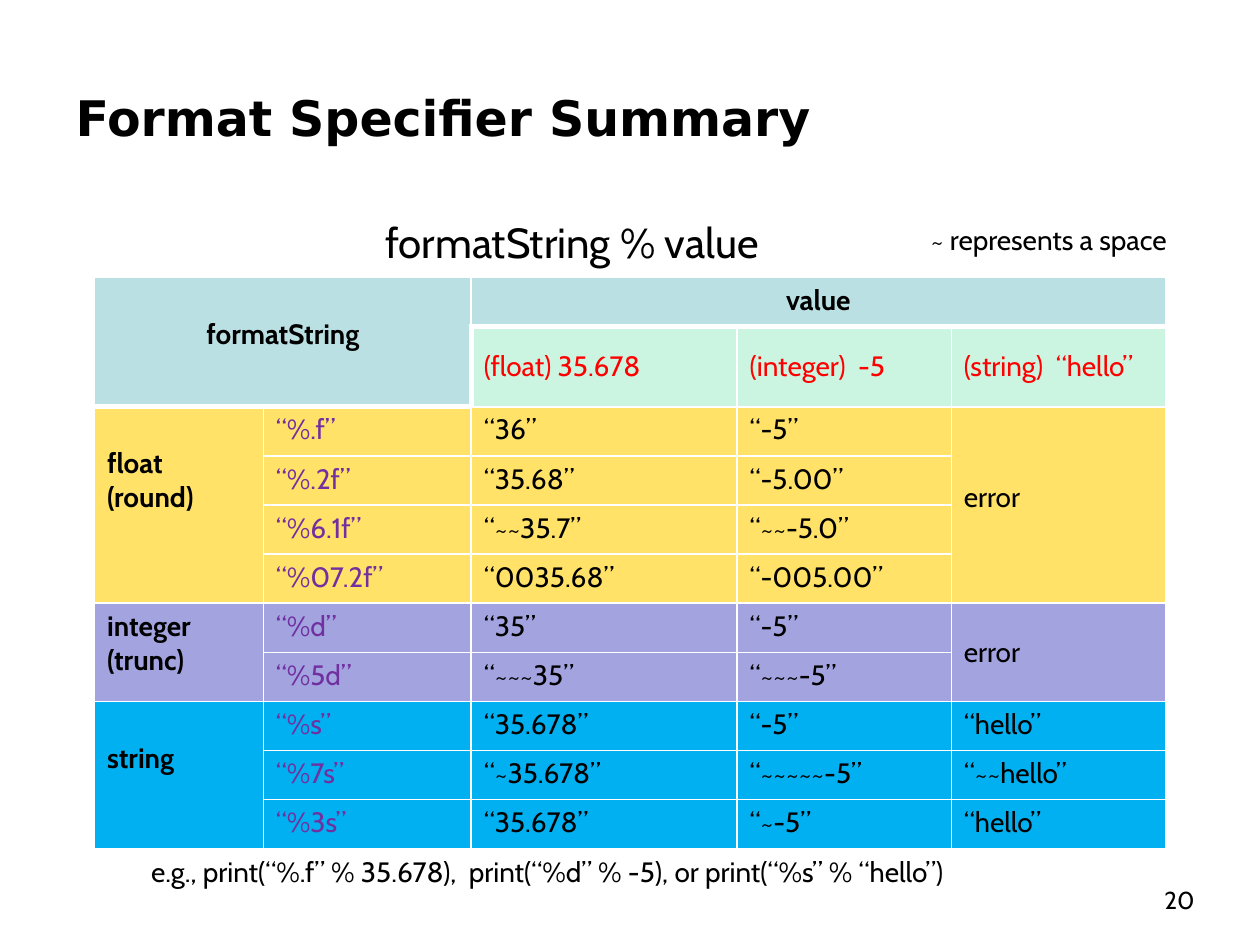
"""Build the format specifier summary slide."""
from typing import NamedTuple

from lxml.etree import SubElement
from pptx import Presentation
from pptx.dml.color import RGBColor
from pptx.enum.text import MSO_ANCHOR, MSO_AUTO_SIZE, PP_ALIGN
from pptx.oxml.ns import qn
from pptx.util import Inches, Pt

BLACK, RED, PURPLE, WHITE = "000000", "FF0000", "7030A0", "FFFFFF"
TEAL, MINT = "BBE0E3", "CBF5E1"
LINE = 0.27
WIDTHS = [1.34, 1.65, 2.11, 1.7, 1.7]
HEIGHTS = [0.39, 0.63] + [0.39] * 9


class Band(NamedTuple):
    name: str
    fill: str
    drop: int
    rows: list
    error: bool = True
    sink: int = 0


class Note(NamedTuple):
    text: str
    left: float
    top: float
    width: float
    height: float
    size: int = 16
    align: PP_ALIGN = PP_ALIGN.LEFT
    anchor: MSO_ANCHOR = MSO_ANCHOR.TOP
    wrap: bool = False
    grow: bool = True


BANDS = [
    Band("float\n(round)", "FFE267", 1, [
        ("“%.f”", "“36”", "“-5”"),
        ("“%.2f”", "“35.68”", "“-5.00”"),
        ("“%6.1f”", "“~~35.7”", "“~~-5.0”"),
        ("“%07.2f”", "“0035.68”", "“-005.00”"),
    ], sink=2),
    Band("integer\n(trunc)", "A3A3E0", 0, [
        ("“%d”", "“35”", "“-5”"),
        ("“%5d”", "“~~~35”", "“~~~-5”"),
    ]),
    Band("string", "00B0F0", 1, [
        ("“%s”", "“35.678”", "“-5”", "“hello”"),
        ("“%7s”", "“~35.678”", "“~~~~~-5”", "“~~hello”"),
        ("“%3s”", "“35.678”", "“~-5”", "“hello”"),
    ], error=False),
]

NOTES = [
    Note("20", 7.5, 6.81, 2.08, 0.5, 14, PP_ALIGN.RIGHT, MSO_ANCHOR.BOTTOM,
         wrap=True, grow=False),
    Note("formatString % value", 2.96, 1.67, 3.37, 0.51, 24),
    Note("e.g., print(“%.f” % 35.678),  print(“%d” % -5), or print(“%s” % “hello”)",
         1.1, 6.73, 7.45, 0.37),
    Note("~ represents a space", 7.29, 1.72, 2.39, 0.37, wrap=True),
]


def color(code: str) -> RGBColor:
    """Turn a hex string into a colour."""
    return RGBColor.from_string(code)


def style(frame, size: int, code: str = BLACK, bold: bool = False,
          align: PP_ALIGN = PP_ALIGN.LEFT, face: str = "Cabin") -> None:
    """Format every paragraph of a text frame."""
    for para in frame.paragraphs:
        para.alignment = align
        font = para.font
        font.size, font.bold, font.name = Pt(size), bold, face
        font.color.rgb = color(code)


def edge(cell, row: int, col: int) -> None:
    """Rule a cell in white, thicker around the headings."""
    thick = {
        "L": row == 1 and col == 2,
        "R": False,
        "T": (row == 1 and col > 1) or (row == 2 and col < 2),
        "B": row == 0 or (row == 1 and col < 2),
    }
    props = cell._tc.get_or_add_tcPr()
    for side, wide in thick.items():
        line = SubElement(props, qn(f"a:ln{side}"), w=str(Pt(3 if wide else 1)))
        fill = SubElement(line, qn("a:solidFill"))
        SubElement(fill, qn("a:srgbClr"), val=WHITE)


def put(table, row: int, col: int, text: str, fill: str, code: str = BLACK,
        bold: bool = False, align: PP_ALIGN = PP_ALIGN.LEFT, drop: int = 0,
        mid: bool = False, span: tuple[int, int] = (1, 1)) -> None:
    """Fill one cell, merged over its span."""
    rows, cols = span
    for r in range(row, row + rows):
        for c in range(col, col + cols):
            part = table.cell(r, c)
            edge(part, r, c)
            part.fill.solid()
            part.fill.fore_color.rgb = color(fill)
            style(part.text_frame, 16)
    cell = table.cell(row, col)
    if span != (1, 1):
        cell.merge(table.cell(row + rows - 1, col + cols - 1))
    cell.text = text
    cell.margin_top = Inches(0.05 + drop * LINE)
    cell.vertical_anchor = MSO_ANCHOR.MIDDLE if mid else MSO_ANCHOR.TOP
    style(cell.text_frame, 16, code, bold, align)


def draw_table(slide) -> None:
    """Draw the headings and the three bands."""
    shape = slide.shapes.add_table(
        len(HEIGHTS), len(WIDTHS), Inches(0.75), Inches(2.2),
        Inches(sum(WIDTHS)), Inches(sum(HEIGHTS)))
    table = shape.table
    table.first_row = table.horz_banding = False
    for col, width in zip(table.columns, WIDTHS):
        col.width = Inches(width)
    for row, height in zip(table.rows, HEIGHTS):
        row.height = Inches(height)

    mid = PP_ALIGN.CENTER
    put(table, 0, 0, "formatString", TEAL, bold=True, align=mid, drop=1, span=(2, 2))
    put(table, 0, 2, "value", TEAL, bold=True, align=mid, span=(1, 3))
    heads = ["(float) 35.678", "(integer)  -5", "(string)  “hello”"]
    for col, text in enumerate(heads, 2):
        put(table, 1, col, text, MINT, RED, mid=True)

    top = 2
    for band in BANDS:
        span = (len(band.rows), 1)
        put(table, top, 0, band.name, band.fill, bold=True, drop=band.drop, span=span)
        if band.error:
            put(table, top, 4, "error", band.fill, drop=band.sink,
                mid=not band.sink, span=span)
        for row, texts in enumerate(band.rows, top):
            for col, text in enumerate(texts, 1):
                put(table, row, col, text, band.fill, PURPLE if col == 1 else BLACK)
        top += len(band.rows)


def draw_note(slide, note: Note) -> None:
    """Draw one text box."""
    box = slide.shapes.add_textbox(
        Inches(note.left), Inches(note.top), Inches(note.width), Inches(note.height))
    frame = box.text_frame
    frame.text = note.text
    frame.word_wrap = note.wrap
    frame.auto_size = MSO_AUTO_SIZE.SHAPE_TO_FIT_TEXT if note.grow else MSO_AUTO_SIZE.NONE
    frame.vertical_anchor = note.anchor
    style(frame, note.size, align=note.align)


def main() -> None:
    """Build and save the slide."""
    deck = Presentation()
    deck.slide_width, deck.slide_height = Inches(10), Inches(7.5)
    slide = deck.slides.add_slide(deck.slide_layouts[5])
    title = slide.shapes.title
    title.left, title.top = Inches(0.5), Inches(0.3)
    title.width, title.height = Inches(7), Inches(1.25)
    title.text_frame.text = "Format Specifier Summary"
    title.text_frame.vertical_anchor = MSO_ANCHOR.MIDDLE
    style(title.text_frame, 28, bold=True, face="DejaVu Sans")
    draw_table(slide)
    for note in NOTES:
        draw_note(slide, note)
    deck.save("out.pptx")


if __name__ == "__main__":
    main()
